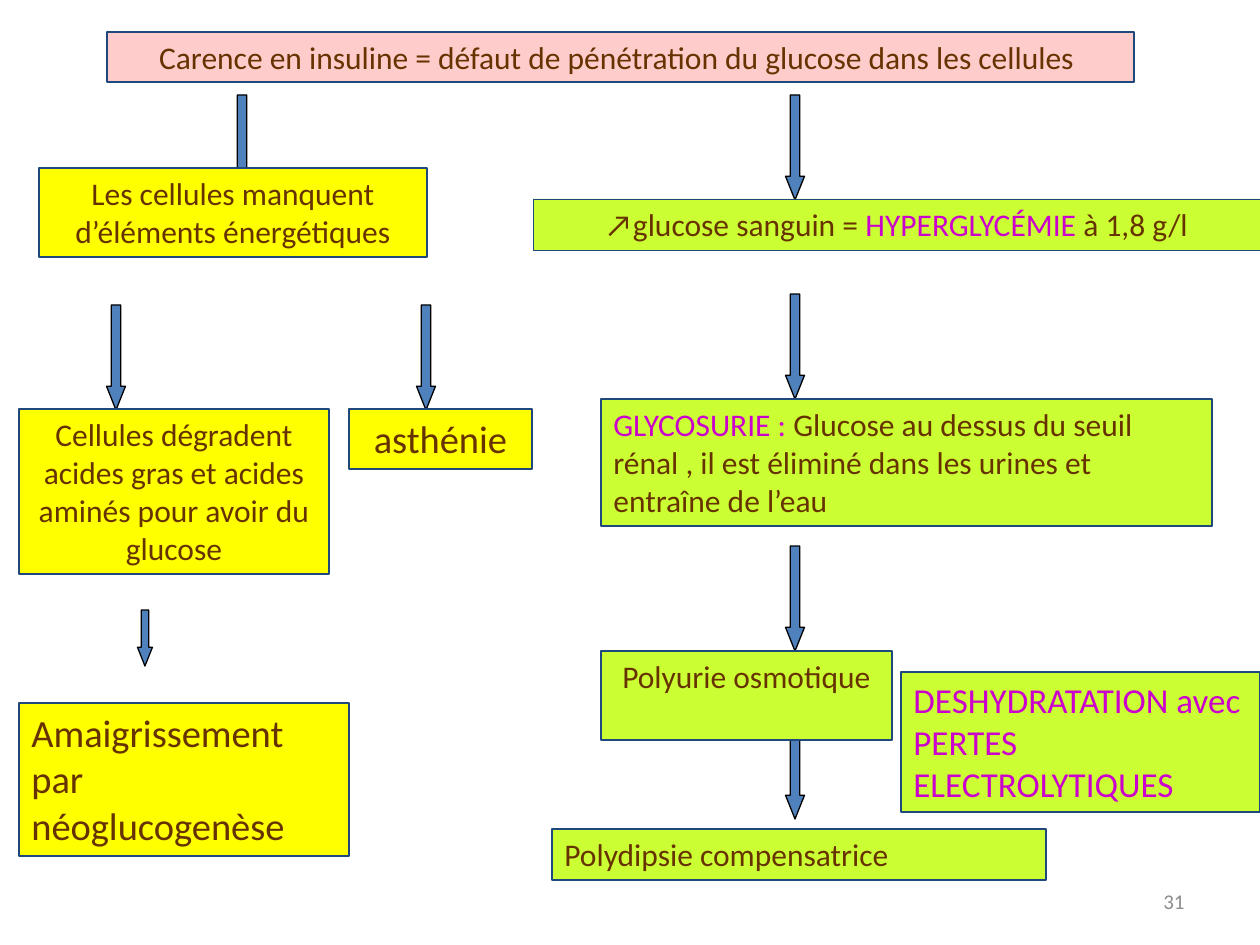
from pptx import Presentation
from pptx.dml.color import RGBColor
from pptx.enum.shapes import MSO_SHAPE as Shape
from pptx.enum.text import MSO_ANCHOR as Anchor, PP_ALIGN as Align
from pptx.util import Emu, Pt

HEX = {
    "pink": "FFCCCC", "yellow": "FFFF00", "green": "CCFF33",
    "brown": "663300", "purple": "CC00CC", "grey": "8C8C8C",
    "blue": "4F81BD", "navy": "1F497D", "black": "000000",
}
FONT = "Calibri"
LEFT, MID, RIGHT = Align.LEFT, Align.CENTER, Align.RIGHT

# left, top, width, height (px), fill, line pt, align, text pt, [(text, colour)]
BOXES = [
    (107, 32, 1027, 50, "pink", 0.75, MID, 18,
     [("Carence en insuline = défaut de pénétration du glucose dans les cellules ", "brown")]),
    (39, 168, 388, 89, "yellow", 0.75, MID, 18,
     [("Les cellules manquent d’éléments énergétiques", "brown")]),
    (533, 199, 727, 51, "green", 0.25, MID, 18,
     [("↗glucose sanguin = ", "brown"), ("HYPERGLYCÉMIE ", "purple"),
      ("à 1,8 g/l", "brown")]),
    (19, 409, 310, 165, "yellow", 0.75, MID, 18,
     [("Cellules dégradent acides gras et acides aminés pour avoir du glucose", "brown")]),
    (349, 409, 183, 60, "yellow", 0.75, MID, 22, [("asthénie", "brown")]),
    (601, 399, 611, 127, "green", 0.75, LEFT, 18,
     [("GLYCOSURIE : ", "purple"),
      ("Glucose au dessus du seuil rénal , il est éliminé dans les urines "
       "et entraîne de l’eau", "brown")]),
    (19, 703, 330, 153, "yellow", 0.75, LEFT, 22,
     [("Amaigrissement par néoglucogenèse", "brown")]),
    (601, 651, 291, 89, "green", 0.75, MID, 18, [("Polyurie osmotique", "brown")]),
    (552, 829, 494, 51, "green", 0.75, LEFT, 18,
     [("Polydipsie compensatrice", "brown")]),
    (901, 672, 359, 140, "green", 0.75, LEFT, 20,
     [("DESHYDRATATION avec PERTES ELECTROLYTIQUES", "purple")]),
]

# centre x, top, width, height (px)
LONG = (19, 105)
SHORT = (15, 56)
ARROWS = [
    (242, 95, *LONG), (116, 305, *LONG), (426, 305, *LONG), (145, 610, *SHORT),
    *((795, top, *LONG) for top in (95, 294, 546, 714)),
]


def px(n):
    return Emu(round(n * 914400 / 126))


def rgb(name):
    return RGBColor.from_string(HEX[name])


def paint(shape, fill, line, width):
    shape.shadow.inherit = False
    shape.fill.solid()
    shape.fill.fore_color.rgb = rgb(fill)
    shape.line.color.rgb = rgb(line)
    shape.line.width = Pt(width)


def write(shape, runs, size, align, anchor):
    frame = shape.text_frame
    frame.word_wrap = True
    frame.vertical_anchor = anchor
    para = frame.paragraphs[0]
    para.alignment = align
    para.font.name = FONT
    para.font.size = Pt(size)
    for text, colour in runs:
        run = para.add_run()
        run.text = text
        run.font.color.rgb = rgb(colour)


def main():
    deck = Presentation()
    deck.slide_width, deck.slide_height = px(1260), px(945)
    shapes = deck.slides.add_slide(deck.slide_layouts[6]).shapes

    number = shapes.add_textbox(px(903), px(876), px(294), px(50))
    write(number, [("31", "grey")], 12, RIGHT, Anchor.MIDDLE)

    # Arrows lie behind the boxes, which hide part of two of them
    for x, top, wide, high in ARROWS:
        arrow = shapes.add_shape(Shape.DOWN_ARROW, px(x - wide / 2), px(top),
                                 px(wide), px(high))
        arrow.adjustments[0] = 0.5
        arrow.adjustments[1] = 1.25
        paint(arrow, "blue", "black", 0.75)

    for *place, fill, line, align, size, runs in BOXES:
        box = shapes.add_shape(Shape.RECTANGLE, *map(px, place))
        paint(box, fill, "navy", line)
        write(box, runs, size, align, Anchor.TOP)

    deck.save("out.pptx")


if __name__ == "__main__":
    main()
